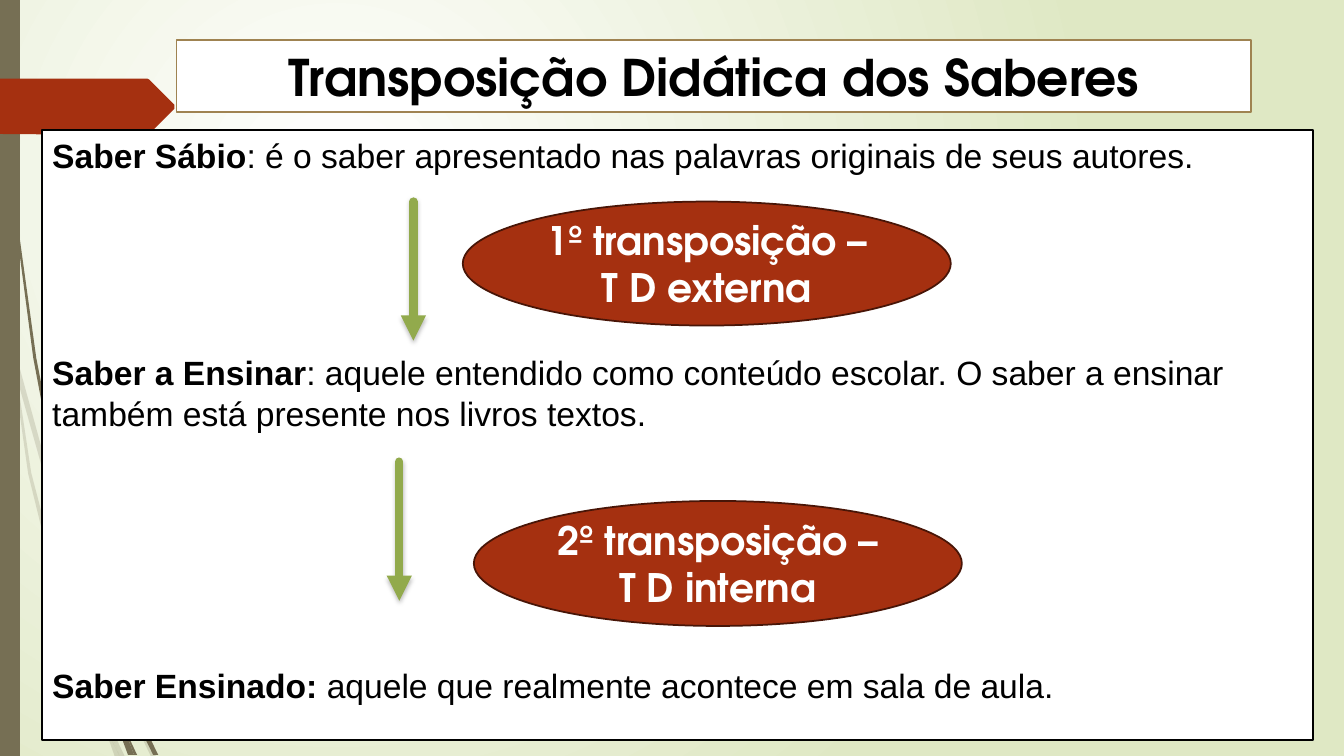
from dataclasses import dataclass

from lxml import etree
from pptx import Presentation
from pptx.dml.color import RGBColor
from pptx.enum.shapes import MSO_CONNECTOR, MSO_SHAPE
from pptx.enum.text import MSO_ANCHOR, PP_ALIGN
from pptx.oxml import parse_xml
from pptx.oxml.ns import nsdecls, qn
from pptx.util import Inches, Pt

RECT, OVAL = MSO_SHAPE.RECTANGLE, MSO_SHAPE.OVAL
STRAIGHT = MSO_CONNECTOR.STRAIGHT
CENTER, LEFT = PP_ALIGN.CENTER, PP_ALIGN.LEFT
MIDDLE, TOP = MSO_ANCHOR.MIDDLE, MSO_ANCHOR.TOP

BLACK = RGBColor(0, 0, 0)
WHITE = RGBColor(0xFF, 0xFF, 0xFF)
PALE = RGBColor(0xDF, 0xE8, 0xC4)
OLIVE = RGBColor(0x76, 0x6F, 0x54)
GOLD = RGBColor(0x9F, 0x83, 0x51)
RUST = RGBColor(0xA5, 0x30, 0x10)
DARK = RGBColor(0x48, 0x15, 0x07)
GREEN = RGBColor(0x92, 0xAA, 0x4C)

COLS, ROWS = 1333, 750
WIDE, HIGH = Inches(13.33), Inches(7.5)
CELL = WIDE // COLS  # the grid is square

HEAD = {"name": "TeX Gyre Adventor", "size": Pt(36), "bold": True}
LABEL = HEAD | {"size": Pt(28)}
BODY = {"name": "Arial", "size": Pt(24)}

Points = list[tuple[int, int]]


@dataclass
class Entry:
    """A bold term and its meaning; a gap in points opens above."""
    term: str
    rest: str = ""
    gap: int = 0


@dataclass
class Box:
    """A framed shape, placed in grid cells."""
    kind: int
    col: int
    row: int
    cols: int
    rows: int
    fill: RGBColor
    edge: RGBColor
    ink: RGBColor
    font: dict
    texts: list[Entry]
    align: int = CENTER
    anchor: int = MIDDLE


@dataclass
class Arrow:
    col: int
    top: int
    end: int


FAINT: list[Points] = [
    [(11, 350), (9, 322), (0, 282), (0, 299), (10, 344)],
    [(58, 522), (84, 599), (85, 586), (62, 520), (14, 345), (17, 376)],
    [(92, 607), (88, 596), (88, 610), (123, 694), (150, 751), (155, 751), (127, 692)],
    [(119, 751), (124, 751), (105, 711)],
    [(93, 683), (70, 619), (31, 469), (17, 376), (11, 350), (28, 470), (65, 621),
     (92, 693), (101, 714), (99, 707)],
    [(101, 714), (114, 751), (119, 751)],
    [(96, 692), (93, 683), (99, 707), (101, 714), (119, 751), (105, 711)],
]
SOLID: list[Points] = [
    [(7, 110), (17, 233), (33, 355), (56, 477), (57, 481), (55, 457), (55, 453),
     (36, 355), (19, 232), (8, 109), (5, 48), (4, 0), (3, 0), (4, 48)],
    [(113, 649), (110, 641), (111, 656), (132, 708), (152, 749), (157, 749), (136, 706)],
    [(133, 749), (136, 749), (122, 719)],
    [(117, 722), (127, 749), (131, 749)],
    [(116, 706), (110, 691), (116, 717), (117, 722), (130, 749), (133, 749), (122, 719)],
]
FLAG: Points = [(173, 108), (148, 133), (146, 134), (136, 134), (0, 133), (0, 78),
                (146, 78), (148, 79), (173, 104)]

BOXES = [
    Box(RECT, 175, 40, 1066, 71, WHITE, GOLD, BLACK, HEAD,
        [Entry("Transposição Didática dos Saberes")]),
    Box(RECT, 42, 129, 1260, 605, WHITE, BLACK, BLACK, BODY, [
        Entry("Saber Sábio",
              ": é o saber apresentado nas palavras originais de seus autores."),
        Entry("Saber a Ensinar",
              ": aquele entendido como conteúdo escolar. O saber a ensinar "
              "também está presente nos livros textos.", 126),
        Entry("Saber Ensinado: ", "aquele que realmente acontece em sala de aula.", 165),
    ], LEFT, TOP),
    Box(OVAL, 459, 200, 484, 123, RUST, DARK, WHITE, LABEL,
        [Entry("1º transposição – T D externa")]),
    Box(OVAL, 470, 497, 484, 124, RUST, DARK, WHITE, LABEL,
        [Entry("2º transposição – T D interna")]),
]
ARROWS = [Arrow(410, 200, 338), Arrow(396, 458, 596)]


def paint(shape, color: RGBColor) -> None:
    """Give a plain fill with no line or shadow."""
    shape.shadow.inherit = False
    shape.fill.solid()
    shape.fill.fore_color.rgb = color
    shape.line.fill.background()


def draw_back(slide) -> None:
    fill = slide.background.fill
    fill.gradient()
    for stop, color, place in zip(fill.gradient_stops, (WHITE, PALE), (0, 1)):
        stop.color.rgb, stop.position = color, place
    grad = slide.element.find(".//" + qn("a:gradFill"))
    grad.replace(grad.find(qn("a:lin")), parse_xml(
        f'<a:path {nsdecls("a")} path="circle"><a:fillToRect l="50000" t="50000" '
        'r="100000" b="100000"/></a:path>'))


def draw_patch(slide, points: Points, color: RGBColor, alpha: int = 100) -> None:
    form = slide.shapes.build_freeform(*points[0], scale=CELL)
    form.add_line_segments(points[1:], close=True)
    shape = form.convert_to_shape()
    paint(shape, color)
    if alpha < 100:
        tone = shape.element.spPr.find(qn("a:solidFill"))[0]
        etree.SubElement(tone, qn("a:alpha"), val=str(alpha * 1000))


def write(box: Box, frame) -> None:
    frame.word_wrap = True
    frame.vertical_anchor = box.anchor
    for num, entry in enumerate(box.texts):
        para = frame.add_paragraph() if num else frame.paragraphs[0]
        para.alignment = box.align
        if box.align == LEFT:
            para.space_before, para.line_spacing = Pt(entry.gap), Pt(29)
        for text, bold in ((entry.term, True), (entry.rest, False)):
            if text:
                run = para.add_run()
                run.text = text
                for key, value in (box.font | {"bold": bold}).items():
                    setattr(run.font, key, value)
                run.font.color.rgb = box.ink


def draw_box(slide, box: Box) -> None:
    cells = (box.col, box.row, box.cols, box.rows)
    shape = slide.shapes.add_shape(box.kind, *(CELL * n for n in cells))
    paint(shape, box.fill)
    shape.line.color.rgb, shape.line.width = box.edge, Pt(1.25)
    write(box, shape.text_frame)


def draw_arrow(slide, arrow: Arrow) -> None:
    ends = (arrow.col, arrow.top, arrow.col, arrow.end)
    link = slide.shapes.add_connector(STRAIGHT, *(CELL * n for n in ends))
    link.line.color.rgb, link.line.width = GREEN, Pt(6)
    line = link.element.spPr.find(qn("a:ln"))
    line.set("cap", "rnd")
    etree.SubElement(line, qn("a:tailEnd"), type="triangle")
    link.element.spPr.append(parse_xml(
        f'<a:effectLst {nsdecls("a")}><a:outerShdw blurRad="{Pt(3)}" dist="{Pt(2)}" '
        f'dir="5400000" rotWithShape="0"><a:srgbClr val="{BLACK}">'
        '<a:alpha val="25000"/></a:srgbClr></a:outerShdw></a:effectLst>'))


def main() -> None:
    deck = Presentation()
    deck.slide_width, deck.slide_height = WIDE, HIGH
    slide = deck.slides.add_slide(deck.slide_layouts[6])
    draw_back(slide)
    for wisp in FAINT:
        draw_patch(slide, wisp, OLIVE, 20)
    for wisp in SOLID:
        draw_patch(slide, wisp, OLIVE)
    draw_patch(slide, [(0, 0), (20, 0), (20, ROWS), (0, ROWS)], OLIVE)
    draw_patch(slide, FLAG, RUST)
    for box in BOXES:
        draw_box(slide, box)
    for arrow in ARROWS:
        draw_arrow(slide, arrow)
    deck.save("out.pptx")


if __name__ == "__main__":
    main()
